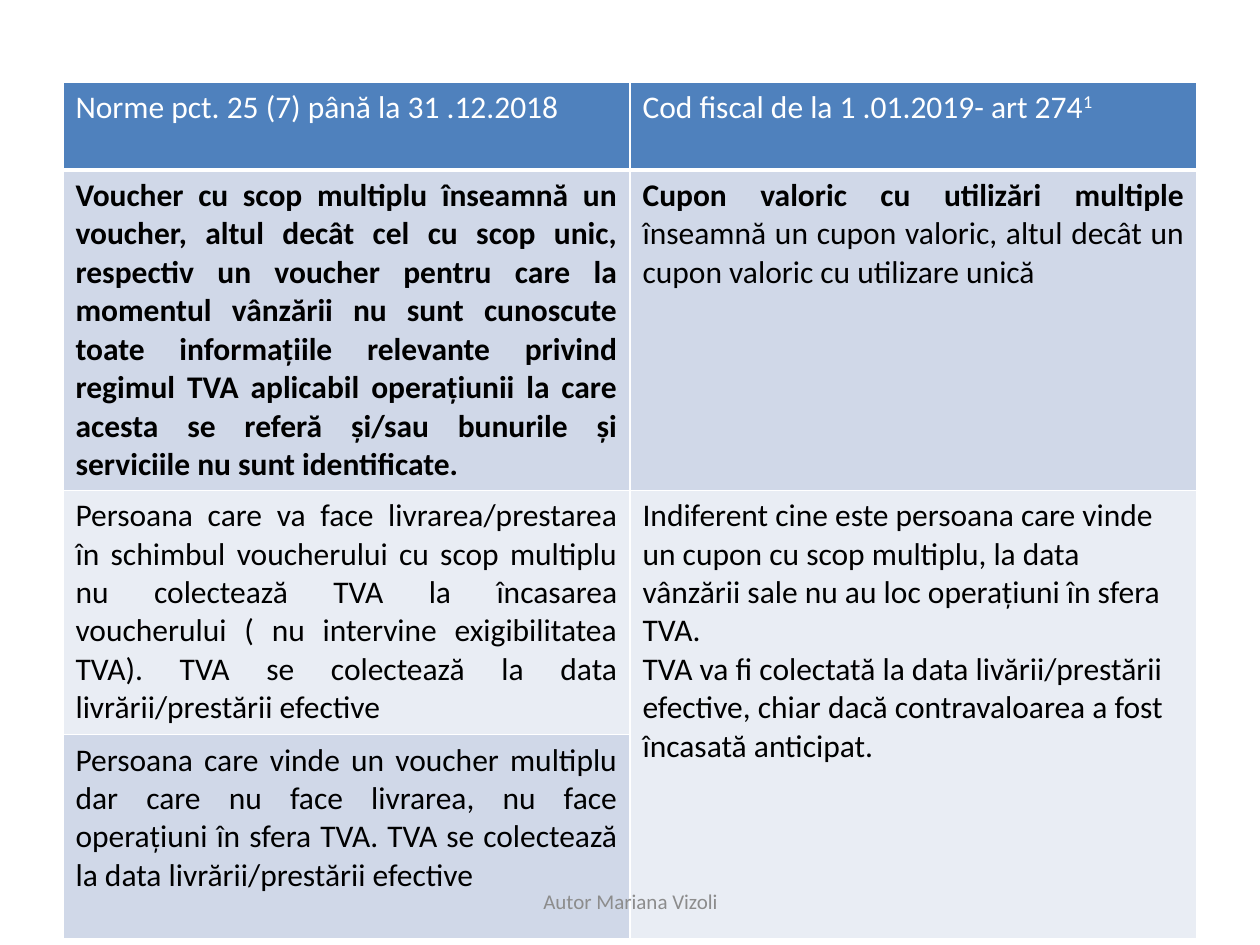
from lxml.etree import SubElement
from pptx import Presentation
from pptx.dml.color import RGBColor
from pptx.enum.text import MSO_ANCHOR, PP_ALIGN
from pptx.oxml.ns import qn
from pptx.util import Inches, Pt

WIDE, HIGH = Inches(10), Inches(7.5)
HEAD, DARK, PALE = "4F81BD", "D0D8E8", "E9EDF4"
ROWS = [0.7, 2.54, 1.94, 1.62]
JUST = PP_ALIGN.JUSTIFY

CELLS = [
    (0, 0, HEAD, ["Norme pct. 25 (7) până la 31 .12.2018"],
     dict(color="FFFFFF", align=JUST)),
    (0, 1, HEAD, [[("Cod fiscal de la 1 .01.2019- art 274", {}),
                   ("1", dict(base=30))]], dict(color="FFFFFF")),
    (1, 0, DARK, ["Voucher cu scop multiplu înseamnă un voucher, altul decât cel "
                  "cu scop unic, respectiv un voucher pentru care la momentul "
                  "vânzării nu sunt cunoscute toate informațiile relevante privind "
                  "regimul TVA aplicabil operațiunii la care acesta se referă "
                  "și/sau bunurile și serviciile nu sunt identificate."],
     dict(bold=True, align=JUST)),
    (1, 1, DARK, [[("Cupon valoric cu utilizări multiple ", dict(bold=True)),
                   ("înseamnă un cupon valoric, altul decât un cupon valoric cu "
                    "utilizare unică", {})]], dict(align=JUST)),
    (2, 0, PALE, ["Persoana care va face livrarea/prestarea în schimbul "
                  "voucherului cu scop multiplu nu colectează TVA la încasarea "
                  "voucherului ( nu intervine exigibilitatea TVA). TVA se "
                  "colectează la data livrării/prestării efective"],
     dict(align=JUST)),
    (2, 1, PALE, ["Indiferent cine este persoana care vinde un cupon cu scop "
                  "multiplu, la data vânzării sale nu au loc operațiuni în sfera "
                  "TVA.",
                  "TVA va fi colectată la data livării/prestării efective, chiar "
                  "dacă contravaloarea a fost încasată anticipat."], {}),
    (3, 0, DARK, ["Persoana care vinde un voucher multiplu dar care nu face "
                  "livrarea, nu face operațiuni în sfera TVA. TVA se colectează "
                  "la data livrării/prestării efective"], dict(align=JUST)),
]


def paint(target, color):
    target.solid()
    target.fore_color.rgb = RGBColor.from_string(color)


def write(frame, paras, size=18, color="000000", bold=False, align=PP_ALIGN.LEFT):
    frame.word_wrap = True
    for spot, runs in enumerate(paras):
        para = frame.add_paragraph() if spot else frame.paragraphs[0]
        para.alignment = align
        for words, style in [(runs, {})] if isinstance(runs, str) else runs:
            run = para.add_run()
            run.text = words
            font = run.font
            font.name, font.size = "Calibri", Pt(size)
            font.bold = style.get("bold", bold)
            paint(font.fill, color)
            if "base" in style:
                run._r.get_or_add_rPr().set("baseline", str(style["base"] * 1000))


def edge(cell, row):
    props = cell._tc.get_or_add_tcPr()
    for place, side in enumerate("LRTB"):
        thick = 3 if (row, side) in [(0, "B"), (1, "T")] else 1
        line = SubElement(props, qn("a:ln" + side), w=str(Pt(thick)))
        fill = SubElement(line, qn("a:solidFill"))
        SubElement(fill, qn("a:srgbClr"), val="FFFFFF")
        props.insert(place, line)


def grid(slide, left, top, width, height):
    table = slide.shapes.add_table(len(ROWS), 2, left, top, width, height).table
    for col in table.columns:
        col.width = width // 2
    for row, share in zip(table.rows, ROWS):
        row.height = int(height * share / sum(ROWS))
    table.cell(2, 1).merge(table.cell(3, 1))
    for row, col, fill, paras, style in CELLS:
        cell = table.cell(row, col)
        paint(cell.fill, fill)
        edge(cell, row)
        write(cell.text_frame, paras, **style)


def footer(slide, left, top, width, height):
    frame = slide.shapes.add_textbox(left, top, width, height).text_frame
    frame.vertical_anchor = MSO_ANCHOR.MIDDLE
    write(frame, ["Autor Mariana Vizoli"], size=12, color="8C8C8C",
          align=PP_ALIGN.CENTER)


def main():
    deck = Presentation()
    deck.slide_width, deck.slide_height = WIDE, HIGH
    slide = deck.slides.add_slide(deck.slide_layouts[6])
    grid(slide, Inches(0.5), Inches(0.65), int(WIDE * 0.9), Inches(sum(ROWS)))
    footer(slide, Inches(3.42), Inches(6.95), Inches(3.17), Inches(0.4))
    deck.save("out.pptx")


if __name__ == "__main__":
    main()
